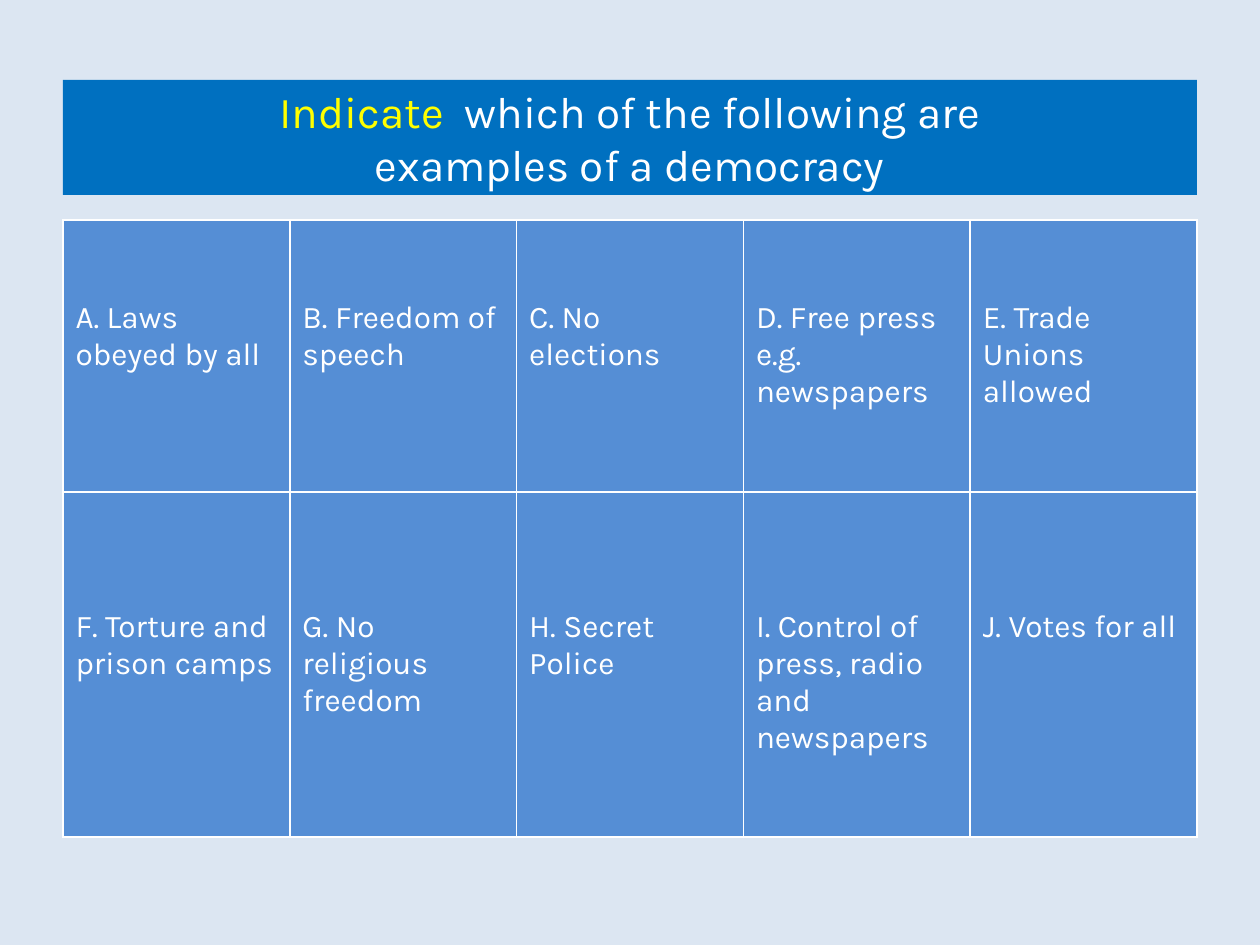
from lxml import etree
from pptx import Presentation
from pptx.dml.color import RGBColor
from pptx.enum.shapes import MSO_SHAPE
from pptx.enum.text import MSO_ANCHOR, PP_ALIGN
from pptx.oxml.ns import qn
from pptx.util import Pt

RECT = MSO_SHAPE.RECTANGLE
MIDDLE = MSO_ANCHOR.MIDDLE
TOP = MSO_ANCHOR.TOP
CENTER = PP_ALIGN.CENTER
LEFT = PP_ALIGN.LEFT
SCALE = 914400 / 126
WHITE, YELLOW = "FFFFFF", "FFFF00"
BLUE, SKY, PALE = "0070C0", "558ED5", "DCE6F2"


def px(num):
    return round(num * SCALE)


def color(code):
    return RGBColor.from_string(code)


class Deck:
    """Holds the style and the current slide, and draws each kind of element."""

    font = "Karla"
    ink = WHITE
    rule = 1

    def __init__(self, wide, high, back):
        self.file = Presentation()
        self.file.slide_width, self.file.slide_height = px(wide), px(high)
        self.slide = self.file.slides.add_slide(self.file.slide_layouts[6])
        fill = self.slide.background.fill
        fill.solid()
        fill.fore_color.rgb = color(back)

    def run(self, para, text, size, ink=None):
        run = para.add_run()
        run.text = text
        run.font.name = self.font
        run.font.size = Pt(size)
        run.font.color.rgb = color(ink or self.ink)

    def banner(self, box, back, lines, size):
        shape = self.slide.shapes.add_shape(RECT, *map(px, box))
        shape.shadow.inherit = False
        shape.fill.solid()
        shape.fill.fore_color.rgb = color(back)
        shape.line.fill.background()
        frame = shape.text_frame
        frame.word_wrap = True
        frame.vertical_anchor = MIDDLE
        para = frame.paragraphs[0]
        para.alignment = CENTER
        for row, line in enumerate(lines):
            if row:
                para.add_line_break()
            for text, ink in line:
                self.run(para, text, size, ink)

    def border(self, cell):
        props = cell._tc.get_or_add_tcPr()
        for side in ("a:lnL", "a:lnR", "a:lnT", "a:lnB"):
            line = etree.SubElement(props, qn(side), w=str(Pt(self.rule)))
            fill = etree.SubElement(line, qn("a:solidFill"))
            etree.SubElement(fill, qn("a:srgbClr"), val=self.ink)

    def table(self, box, rows, highs, tops, back, size):
        grid = self.slide.shapes.add_table(len(rows), len(rows[0]), *map(px, box)).table
        grid.first_row = grid.horz_banding = False
        for r, (texts, high, top) in enumerate(zip(rows, highs, tops)):
            grid.rows[r].height = px(high)
            for c, text in enumerate(texts):
                cell = grid.cell(r, c)
                self.border(cell)
                cell.fill.solid()
                cell.fill.fore_color.rgb = color(back)
                cell.vertical_anchor = TOP
                cell.margin_top = px(top)
                para = cell.text_frame.paragraphs[0]
                para.alignment = LEFT
                self.run(para, text, size)

    def save(self):
        self.file.save("out.pptx")


def main():
    deck = Deck(1260, 945, PALE)
    title = [
        [("Indicate ", YELLOW), (" which of the following are", WHITE)],
        [("examples of a democracy", WHITE)],
    ]
    deck.banner((63, 80, 1134, 115), BLUE, title, 25.2)
    cards = [
        ["A. Laws obeyed by all", "B. Freedom of speech", "C. No elections",
         "D. Free press e.g. newspapers", "E. Trade Unions allowed"],
        ["F. Torture and prison camps", "G. No religious freedom", "H. Secret Police",
         "I. Control of press, radio and newspapers", "J. Votes for all"],
    ]
    deck.table((63, 220, 1134, 617), cards, (272, 345), (80, 117), SKY, 18)
    deck.save()


if __name__ == "__main__":
    main()
